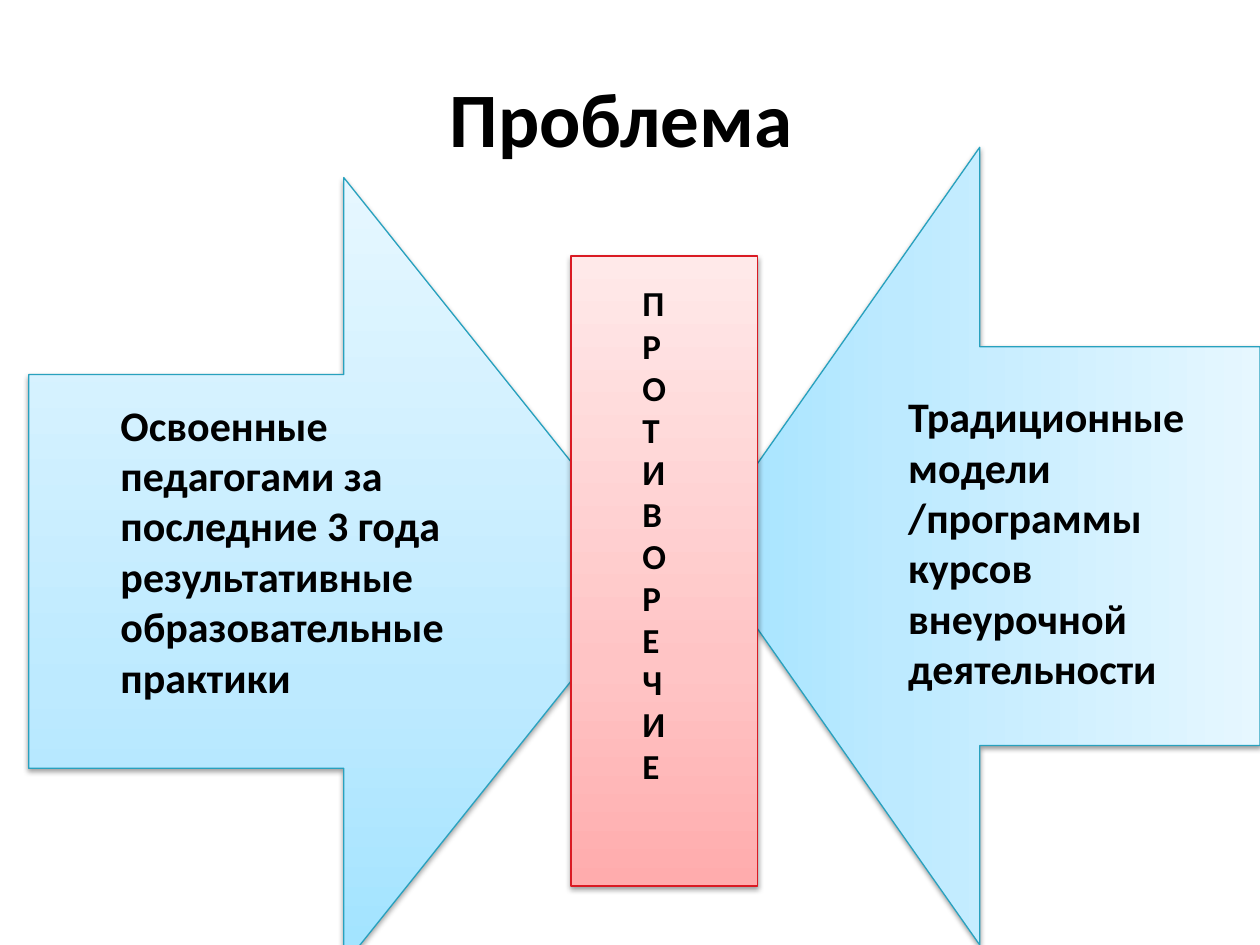
import pptx
import pptx.dml.color
import pptx.enum.shapes
import pptx.enum.text
import pptx.oxml
import pptx.oxml.ns
import pptx.util
from dataclasses import dataclass
from pptx.util import Cm


@dataclass(frozen=True)
class Theme:
    font: str = "Calibri"
    text: str = "000000"
    title_size: int = 44
    body_size: int = 24
    letter_size: int = 20
    blue_stops: tuple = ((0, "A1E3FF"), (35, "BDEAFF"), (100, "E6F7FF"))
    blue_line: str = "28A1BE"
    red_stops: tuple = ((0, "FFACAD"), (35, "FFC4C5"), (100, "FFE9E9"))
    red_line: str = "DA1A23"
    line_width: float = 0.75


THEME = Theme()
SHAPES = pptx.enum.shapes.MSO_SHAPE


def format_text(text_frame, size):
    """Give every run the bold theme font."""
    for paragraph in text_frame.paragraphs:
        for run in paragraph.runs:
            run.font.name = THEME.font
            run.font.size = pptx.util.Pt(size)
            run.font.bold = True
            run.font.color.rgb = pptx.dml.color.RGBColor.from_string(THEME.text)


def add_title(slide, text, box):
    title = slide.shapes.title
    title.left, title.top, title.width, title.height = map(Cm, box)
    title.text_frame.text = text
    title.text_frame.vertical_anchor = pptx.enum.text.MSO_ANCHOR.MIDDLE
    title.text_frame.paragraphs[0].alignment = pptx.enum.text.PP_ALIGN.CENTER
    format_text(title.text_frame, THEME.title_size)


def set_gradient(shape, stops):
    """Run the colour stops from the bottom of the shape to its top."""
    shape.fill.gradient()
    shape.fill.gradient_angle = 90
    namespace = pptx.oxml.ns.nsdecls("a")
    stop_list = shape.element.spPr.find(".//" + pptx.oxml.ns.qn("a:gsLst"))
    for stop in list(stop_list):
        stop_list.remove(stop)
    for position, color in stops:
        stop_list.append(pptx.oxml.parse_xml(
            f'<a:gs {namespace} pos="{position * 1000}"><a:srgbClr val="{color}"/></a:gs>'))


def add_shadow(shape):
    """Drop a soft shadow straight down."""
    shape.shadow.inherit = False
    effects = shape.element.spPr.find(pptx.oxml.ns.qn("a:effectLst"))
    effects.append(pptx.oxml.parse_xml(
        f'<a:outerShdw {pptx.oxml.ns.nsdecls("a")} blurRad="{pptx.util.Pt(3.1)}" '
        f'dist="{pptx.util.Pt(1.6)}" dir="5400000" rotWithShape="0">'
        '<a:srgbClr val="000000"><a:alpha val="38000"/></a:srgbClr></a:outerShdw>'))


def add_block(slide, kind, box, stops, line_color, rotation=0):
    shape = slide.shapes.add_shape(kind, *map(Cm, box))
    shape.rotation = rotation
    set_gradient(shape, stops)
    shape.line.color.rgb = pptx.dml.color.RGBColor.from_string(line_color)
    shape.line.width = pptx.util.Pt(THEME.line_width)
    add_shadow(shape)


def add_label(slide, text, box, size):
    text_frame = slide.shapes.add_textbox(*map(Cm, box)).text_frame
    text_frame.word_wrap = True
    text_frame.auto_size = pptx.enum.text.MSO_AUTO_SIZE.SHAPE_TO_FIT_TEXT
    text_frame.text = text
    format_text(text_frame, size)


def main():
    presentation = pptx.Presentation()
    presentation.slide_width, presentation.slide_height = Cm(25.4), Cm(19.05)
    slide = presentation.slides.add_slide(presentation.slide_layouts[5])
    add_title(slide, "Проблема ", (1.27, 0.76, 22.86, 3.18))

    # Two arrows facing each other
    add_block(slide, SHAPES.RIGHT_ARROW, (0.58, 3.58, 12.7, 15.88),
              THEME.blue_stops, THEME.blue_line)
    add_block(slide, SHAPES.DOWN_ARROW, (11.71, 5.36, 16.08, 11.3),
              THEME.blue_stops, THEME.blue_line, rotation=90)
    add_label(slide, "Освоенные педагогами за последние 3 года "
              "результативные образовательные практики",
              (2.18, 7.92, 8.33, 6.4), THEME.body_size)
    add_label(slide, "Традиционные модели /программы курсов внеурочной деятельности",
              (18.06, 7.75, 6.76, 6.4), THEME.body_size)

    # Barrier between them, one letter to a line
    add_block(slide, SHAPES.RECTANGLE, (11.51, 5.16, 3.76, 12.7),
              THEME.red_stops, THEME.red_line)
    add_label(slide, "\n".join("ПРОТИВОРЕЧИЕ"), (12.7, 5.56, 1.98, 11.28),
              THEME.letter_size)

    presentation.save("out.pptx")


if __name__ == "__main__":
    main()
